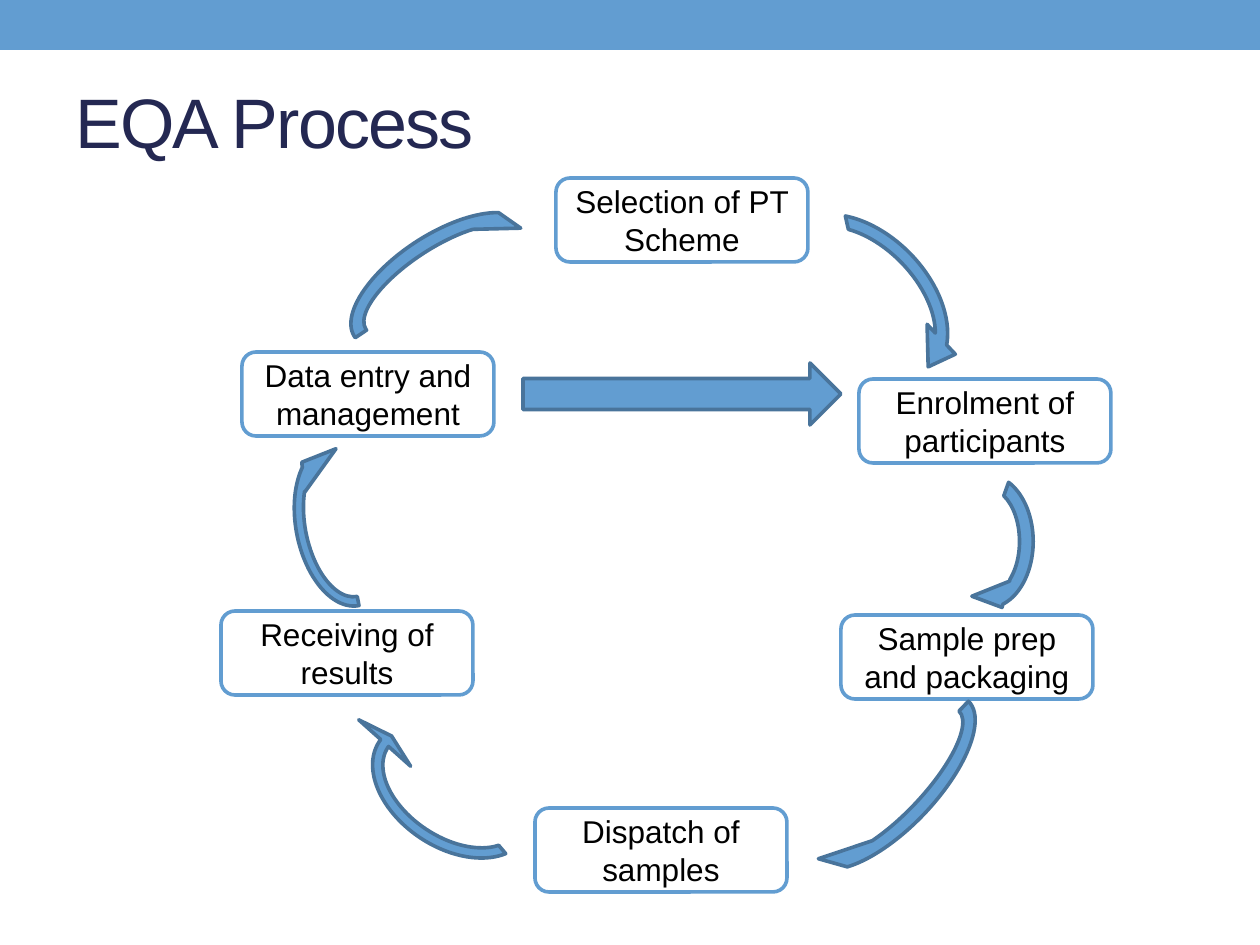
from pptx import Presentation
from pptx.dml.color import RGBColor
from pptx.enum.shapes import MSO_SHAPE
from pptx.enum.text import MSO_ANCHOR, PP_ALIGN
from pptx.util import Emu, Pt

RECTANGLE = MSO_SHAPE.RECTANGLE
ROUNDED = MSO_SHAPE.ROUNDED_RECTANGLE
CURVED_ARROW = MSO_SHAPE.CIRCULAR_ARROW
RIGHT_ARROW = MSO_SHAPE.RIGHT_ARROW
MIDDLE = MSO_ANCHOR.MIDDLE
CENTER = PP_ALIGN.CENTER

EMU_PER_PX = 914400 / 126
COLORS = {
    "accent": "629DD1",
    "arrow_edge": "49749B",
    "title": "242852",
    "text": "000000",
    "paper": "FFFFFF",
}
STEP_SIZE = (252, 84)

STEPS = [
    ("Selection of PT Scheme", 556, 178),
    ("Enrolment of participants", 859, 379),
    ("Data entry and management", 242, 352),
    ("Receiving of results", 221, 611),
    ("Dispatch of samples", 535, 808),
    ("Sample prep and packaging", 841, 615),
]
CYCLE_ARROWS = [
    ((750, 220, 228, 158), 45.7, (0.08, 11.42, 205.12, 127, 0.13)),
    ((914, 489, 147, 105), 90, (0.13, 21.09, 204.58, 119.77, 0.13)),
    ((772, 730, 238, 105), 133.6, (0.13, 11.42, 204.58, 108, 0.13)),
    ((335, 703, 234, 174), 213.6, (0.06, 4.12, 0.8, 117.75, 0.2)),
    ((251, 467, 185, 116), 259.1, (0.08, 20.75, 198.47, 108, 0.13)),
    ((331, 228, 219, 105), 326.9, (0.13, 11.42, 204.58, 107.51, 0.13)),
]


def px(length):
    return Emu(round(length * EMU_PER_PX))


def rgb(name):
    return RGBColor.from_string(COLORS[name])


class ProcessSlide:
    font = "Arial"
    line_width = Pt(2.08)

    def __init__(self, presentation):
        self.slide = presentation.slides.add_slide(presentation.slide_layouts[6])

    def shape(self, preset, box, fill, edge=None):
        shape = self.slide.shapes.add_shape(preset, *map(px, box))
        shape.shadow.inherit = False
        shape.fill.solid()
        shape.fill.fore_color.rgb = rgb(fill)
        if edge:
            shape.line.color.rgb = rgb(edge)
            shape.line.width = self.line_width
        else:
            shape.line.fill.background()
        return shape

    def label(self, shape, text, size, color):
        frame = shape.text_frame
        frame.text = text
        frame.word_wrap = True
        frame.vertical_anchor = MIDDLE
        paragraph = frame.paragraphs[0]
        font = paragraph.runs[0].font
        font.name = self.font
        font.size = Pt(size)
        font.color.rgb = rgb(color)
        return paragraph

    def title(self, text, box):
        heading = self.slide.shapes.add_textbox(*map(px, box))
        paragraph = self.label(heading, text, 40, "title")
        paragraph.runs[0]._r.get_or_add_rPr().set("spc", "-100")

    def step(self, text, left, top):
        step = self.shape(ROUNDED, (left, top, *STEP_SIZE), "paper", "accent")
        self.label(step, text, 18, "text").alignment = CENTER

    def arrow(self, preset, box, rotation=0, adjustments=()):
        arrow = self.shape(preset, box, "accent", "arrow_edge")
        arrow.rotation = rotation
        for index, value in enumerate(adjustments):
            arrow.adjustments[index] = value


def main():
    presentation = Presentation()
    presentation.slide_width = px(1260)
    presentation.slide_height = px(945)

    process = ProcessSlide(presentation)
    process.shape(RECTANGLE, (0, 0, 1260, 50), "accent")
    for text, left, top in STEPS:
        process.step(text, left, top)
    process.title("EQA Process", (63, 53, 1134, 136))
    for box, rotation, adjustments in CYCLE_ARROWS:
        process.arrow(CURVED_ARROW, box, rotation, adjustments)
    process.arrow(RIGHT_ARROW, (523, 363, 318, 62))

    presentation.save("out.pptx")


if __name__ == "__main__":
    main()
